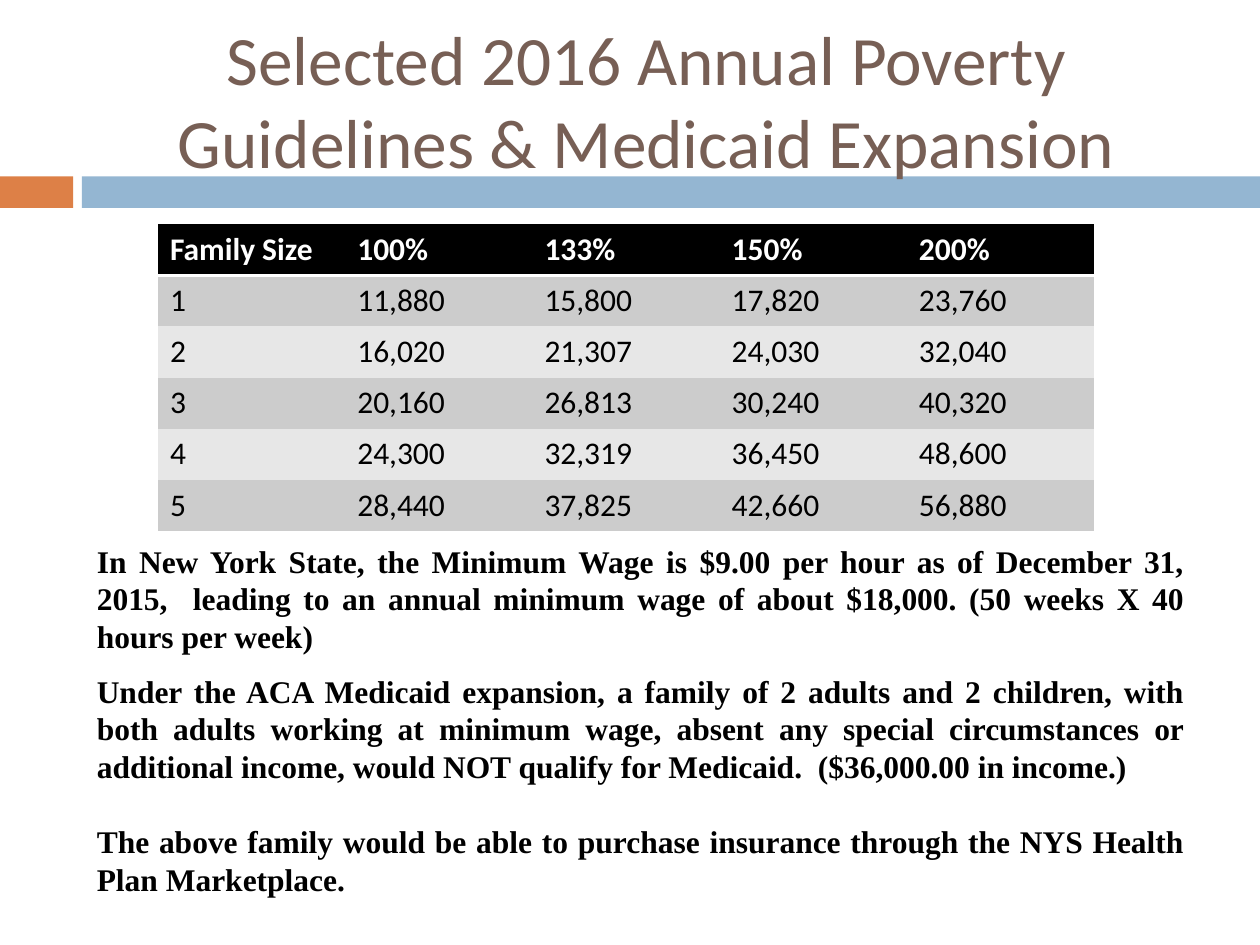
import pptx
import pptx.dml.color
import pptx.enum.shapes
import pptx.enum.text
import pptx.oxml
import pptx.oxml.ns
import pptx.util

Inches, Pt = pptx.util.Inches, pptx.util.Pt
RGBColor = pptx.dml.color.RGBColor
PP_ALIGN = pptx.enum.text.PP_ALIGN
MSO_ANCHOR = pptx.enum.text.MSO_ANCHOR

ORANGE = RGBColor(0xDD, 0x80, 0x47)
BLUE = RGBColor(0x94, 0xB6, 0xD2)
BROWN = RGBColor(0x77, 0x5F, 0x55)
BLACK = RGBColor(0, 0, 0)
WHITE = RGBColor(0xFF, 0xFF, 0xFF)
ODD_ROW = RGBColor(0xCC, 0xCC, 0xCC)
EVEN_ROW = RGBColor(0xE7, 0xE7, 0xE7)
PLAIN_TABLE_STYLE = "{2D5ABB26-0587-4C30-8999-92F81FD0307C}"

TITLE = "Selected 2016 Annual Poverty Guidelines & Medicaid Expansion"
GUIDELINES = [
    ("Family Size", "100%", "133%", "150%", "200%"),
    ("1", "11,880", "15,800", "17,820", "23,760"),
    ("2", "16,020", "21,307", "24,030", "32,040"),
    ("3", "20,160", "26,813", "30,240", "40,320"),
    ("4", "24,300", "32,319", "36,450", "48,600"),
    ("5", "28,440", "37,825", "42,660", "56,880"),
]
# Each note with the space before it, in points
NOTES = [
    ("In New York State, the Minimum Wage is $9.00 per hour as of December 31, "
     "2015,  leading to an annual minimum wage of about $18,000. "
     "(50 weeks X 40 hours per week)", 0),
    ("Under the ACA Medicaid expansion, a family of 2 adults and 2 children, "
     "with both adults working at minimum wage, absent any special "
     "circumstances or additional income, would NOT qualify for Medicaid.  "
     "($36,000.00 in income.)", 9.5),
    ("The above family would be able to purchase insurance through the NYS "
     "Health Plan Marketplace.", 21),
]
BANDS = [(0, 0.58, ORANGE), (0.65, 9.35, BLUE)]  # left, width, colour


def format_runs(paragraph, font_name, size, color, bold=False):
    for run in paragraph.runs:
        run.font.name = font_name
        run.font.size = Pt(size)
        run.font.color.rgb = color
        run.font.bold = bold


def add_bottom_border(cell, color, points):
    border = pptx.oxml.parse_xml(
        f'<a:lnB {pptx.oxml.ns.nsdecls("a")} w="{Pt(points)}"><a:solidFill>'
        f'<a:srgbClr val="{color}"/></a:solidFill></a:lnB>')
    cell._tc.get_or_add_tcPr().insert(0, border)


def add_bands(slide):
    for left, width, color in BANDS:
        band = slide.shapes.add_shape(
            pptx.enum.shapes.MSO_SHAPE.RECTANGLE,
            Inches(left), Inches(1.4), Inches(width), Inches(0.25))
        band.shadow.inherit = False
        band.fill.solid()
        band.fill.fore_color.rgb = color
        band.line.fill.background()
        # Bands lie behind the title
        slide.shapes._spTree.insert(2, band._element)


def add_title(slide):
    title = slide.shapes.title
    title.left, title.top = Inches(0.67), Inches(0.25)
    title.width, title.height = Inches(8.92), Inches(1.08)
    frame = title.text_frame
    frame.text = TITLE
    frame.word_wrap = True
    frame.auto_size = pptx.enum.text.MSO_AUTO_SIZE.NONE
    frame.vertical_anchor = MSO_ANCHOR.MIDDLE
    frame.paragraphs[0].alignment = PP_ALIGN.CENTER
    format_runs(frame.paragraphs[0], "Calibri", 39.6, BROWN)


def add_guidelines(slide):
    table_frame = slide.shapes.add_table(
        len(GUIDELINES), len(GUIDELINES[0]),
        Inches(1.25), Inches(1.78), Inches(7.43), Inches(2.43))
    table = table_frame.table
    table._tbl.tblPr.find(pptx.oxml.ns.qn("a:tableStyleId")).text = PLAIN_TABLE_STYLE
    for r, values in enumerate(GUIDELINES):
        is_header = r == 0
        fill = BLACK if is_header else ODD_ROW if r % 2 else EVEN_ROW
        for c, value in enumerate(values):
            cell = table.cell(r, c)
            cell.text = value
            cell.fill.solid()
            cell.fill.fore_color.rgb = fill
            format_runs(cell.text_frame.paragraphs[0], "Calibri", 18,
                        WHITE if is_header else BLACK, is_header)
            if is_header:
                add_bottom_border(cell, WHITE, 2)


def add_notes(slide):
    frame = slide.shapes.add_textbox(
        Inches(0.67), Inches(4.25), Inches(8.83), Inches(3.1)).text_frame
    frame.word_wrap = True
    for i, (note, space) in enumerate(NOTES):
        paragraph = frame.add_paragraph() if i else frame.paragraphs[0]
        paragraph.text = note
        paragraph.alignment = PP_ALIGN.JUSTIFY
        paragraph.space_before = Pt(space)
        format_runs(paragraph, "Times New Roman", 18, BLACK, True)


def main():
    deck = pptx.Presentation()
    deck.slide_width, deck.slide_height = Inches(10), Inches(7.5)
    slide = deck.slides.add_slide(deck.slide_layouts[5])
    add_bands(slide)
    add_title(slide)
    add_guidelines(slide)
    add_notes(slide)
    deck.save("out.pptx")


if __name__ == "__main__":
    main()
